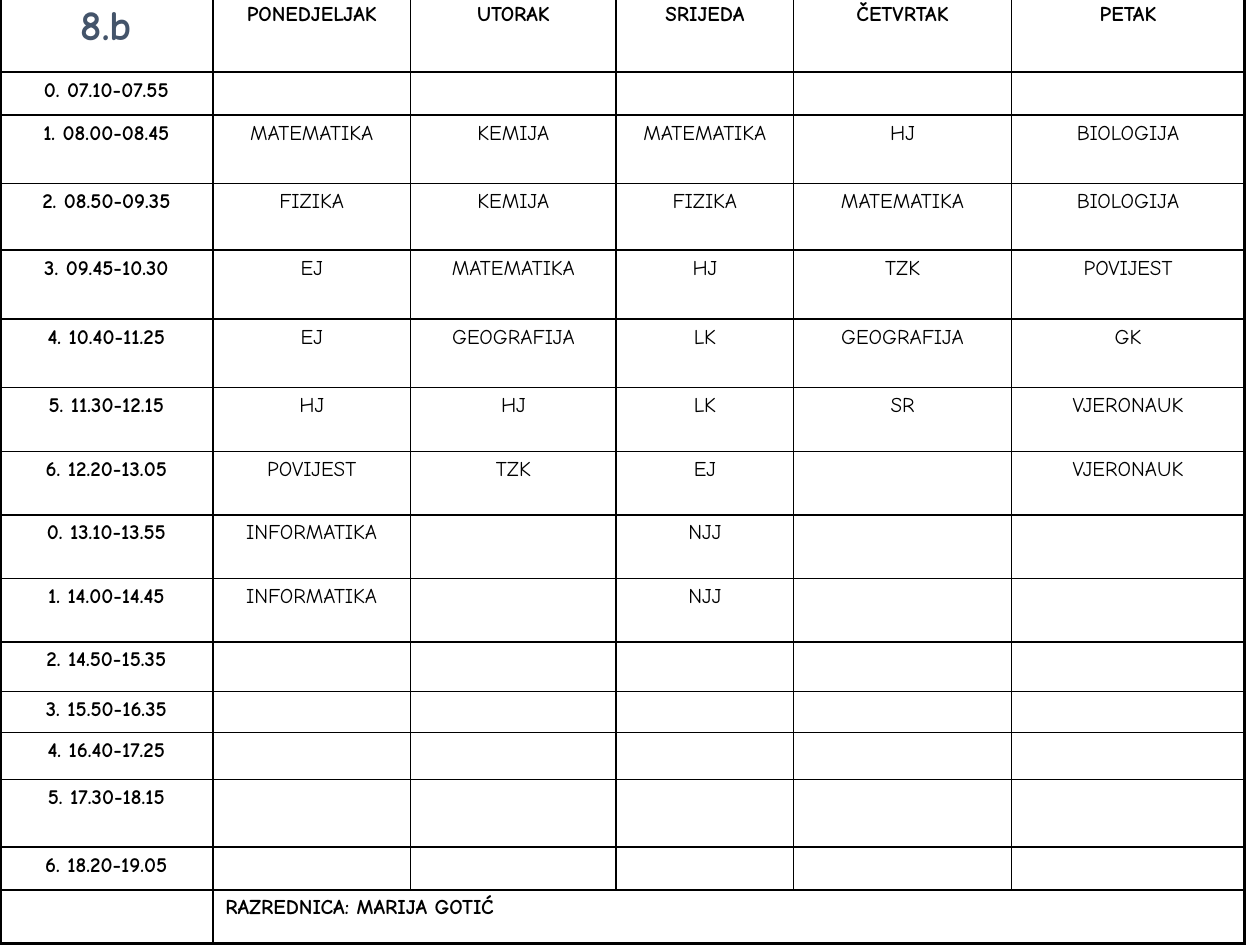
from dataclasses import dataclass

from lxml import etree
from pptx import Presentation
from pptx import util as u
from pptx.dml.color import RGBColor
from pptx.enum import text
from pptx.oxml import ns


@dataclass(frozen=True)
class Theme:
    font: str = "Comic Neue"
    ink: str = "000000"
    title_color: str = "44546A"
    body_size: float = 12
    title_size: float = 24
    inner_line: float = 1
    outer_line: float = 2.25


COLUMN_WIDTHS = [4.29, 3.99, 4.14, 3.58, 4.39, 4.7]
ROW_HEIGHTS = [1.53, 0.87, 1.38, 1.34, 1.39, 1.38, 1.29, 1.28,
               1.28, 1.28, 1, 0.83, 0.95, 1.36, 0.86, 1.08]
TIMETABLE = [
    ["8.b", "PONEDJELJAK", "UTORAK", "SRIJEDA", "ČETVRTAK", "PETAK"],
    ["0. 07.10-07.55"],
    ["1. 08.00-08.45", "MATEMATIKA", "KEMIJA", "MATEMATIKA", "HJ", "BIOLOGIJA"],
    ["2. 08.50-09.35", "FIZIKA", "KEMIJA", "FIZIKA", "MATEMATIKA", "BIOLOGIJA"],
    ["3. 09.45-10.30", "EJ", "MATEMATIKA", "HJ", "TZK", "POVIJEST"],
    ["4. 10.40-11.25", "EJ", "GEOGRAFIJA", "LK", "GEOGRAFIJA", "GK"],
    ["5. 11.30-12.15", "HJ", "HJ", "LK", "SR", "VJERONAUK"],
    ["6. 12.20-13.05", "POVIJEST", "TZK", "EJ", "", "VJERONAUK"],
    ["0. 13.10-13.55", "INFORMATIKA", "", "NJJ"],
    ["1. 14.00-14.45", "INFORMATIKA", "", "NJJ"],
    ["2. 14.50-15.35"],
    ["3. 15.50-16.35"],
    ["4. 16.40-17.25"],
    ["5. 17.30-18.15"],
    ["6. 18.20-19.05"],
    ["", "RAZREDNICA: MARIJA GOTIĆ"],
]


class SlideBuilder:
    def __init__(self, slide, theme):
        self.slide = slide
        self.theme = theme

    def table(self, left, top, widths, heights):
        """Add an unstyled table with its sizes in centimetres."""
        frame = self.slide.shapes.add_table(
            len(heights), len(widths), u.Cm(left), u.Cm(top),
            u.Cm(sum(widths)), u.Cm(sum(heights)))
        table = frame.table
        table.first_row = table.horz_banding = False
        for column, width in zip(table.columns, widths):
            column.width = u.Cm(width)
        for row, height in zip(table.rows, heights):
            row.height = u.Cm(height)
        return table

    def cell_text(self, cell, content, bold=False, title=False, centered=True):
        size = u.Pt(self.theme.title_size if title else self.theme.body_size)
        color = self.theme.title_color if title else self.theme.ink
        cell.text_frame.text = content
        paragraph = cell.text_frame.paragraphs[0]
        if centered:
            paragraph.alignment = text.PP_ALIGN.CENTER
        for run in paragraph.runs:
            run.font.name = self.theme.font
            run.font.size = size
            run.font.bold = bold
            run.font.color.rgb = RGBColor.from_string(color)
        if not content:
            # The end mark's size keeps an empty cell from stretching its row.
            etree.SubElement(paragraph._p, ns.qn("a:endParaRPr"),
                             sz=str(size.centipoints))

    def cell_borders(self, cell, outer_sides):
        properties = cell._tc.get_or_add_tcPr()
        for side in "LRTB":
            points = (self.theme.outer_line if side in outer_sides
                      else self.theme.inner_line)
            line = etree.SubElement(properties, ns.qn(f"a:ln{side}"),
                                    w=str(u.Pt(points)))
            fill = etree.SubElement(line, ns.qn("a:solidFill"))
            etree.SubElement(fill, ns.qn("a:srgbClr"), val=self.theme.ink)
        cell.fill.background()


def main():
    presentation = Presentation()
    presentation.slide_width = u.Cm(25.4)
    presentation.slide_height = u.Cm(19.05)
    slide = presentation.slides.add_slide(presentation.slide_layouts[6])
    builder = SlideBuilder(slide, Theme())
    table = builder.table(0, -0.08, COLUMN_WIDTHS, ROW_HEIGHTS)

    last_row = len(ROW_HEIGHTS) - 1
    last_column = len(COLUMN_WIDTHS) - 1
    table.cell(last_row, 1).merge(table.cell(last_row, last_column))

    for row, entries in enumerate(TIMETABLE):
        for column in range(last_column + 1):
            cell = table.cell(row, column)
            outer_sides = {
                "L": column == 0,
                "R": column == last_column or cell.is_merge_origin,
                "T": row == 0,
                "B": row == last_row,
            }
            builder.cell_borders(
                cell, [side for side, outer in outer_sides.items() if outer])
            builder.cell_text(
                cell,
                entries[column] if column < len(entries) else "",
                bold=column == 0 or row in (0, last_row),
                title=row == column == 0,
                centered=not cell.is_merge_origin)

    presentation.save("out.pptx")


if __name__ == "__main__":
    main()
